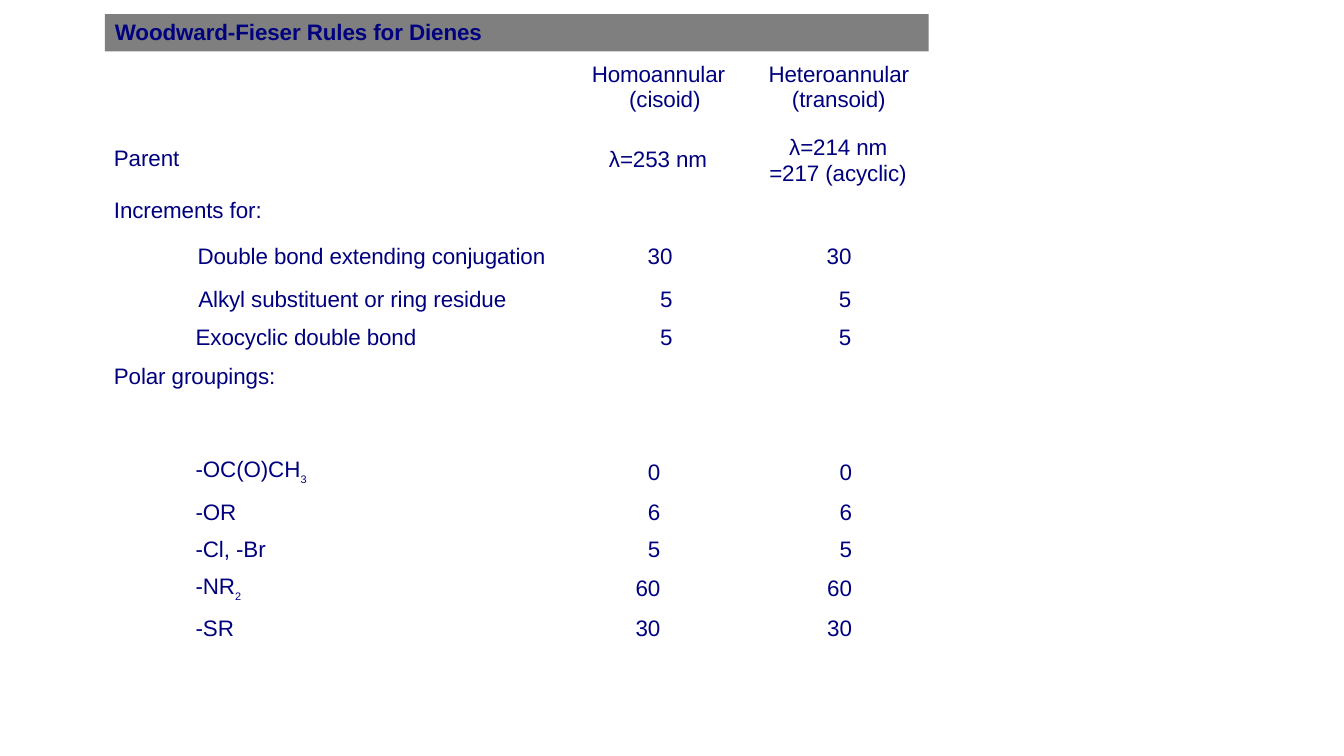
from dataclasses import dataclass
from typing import Any

import lxml.etree
import pptx
import pptx.dml.color
import pptx.enum.shapes
import pptx.enum.text
import pptx.oxml.ns
import pptx.util

SCALE = 9144
NAVY = "00007F"
GRAY = "7F7F7F"
ALIGN = pptx.enum.text.PP_ALIGN
LEFT, MID, RIGHT = ALIGN.LEFT, ALIGN.CENTER, ALIGN.RIGHT
TOP = pptx.enum.text.MSO_ANCHOR.TOP


@dataclass
class Para:
    text: str
    left: int = 0
    first: int = 0
    right: int = 0
    align: Any = LEFT
    before: float = 0
    line: float | None = None
    bold: bool = False


@dataclass
class Box:
    place: tuple[int, int, int, int]
    top: int
    paras: list[Para]
    fill: str | None = None


@dataclass
class Row:
    high: int
    tops: tuple[int, int, int]
    cells: tuple[Para, Para, Para]


@dataclass
class Grid:
    place: tuple[int, int]
    wides: tuple[int, int, int]
    rows: list[Row]


def px(count: int) -> pptx.util.Emu:
    return pptx.util.Emu(count * SCALE)


def color(code: str) -> pptx.dml.color.RGBColor:
    return pptx.dml.color.RGBColor.from_string(code)


def apply(target: Any, values: dict[str, Any]) -> None:
    for name, value in values.items():
        setattr(target, name, value)


def insets(top: int) -> dict[str, Any]:
    return {"margin_left": 0, "margin_right": 0, "margin_bottom": 0,
            "margin_top": px(top), "vertical_anchor": TOP}


def write(frame: Any, paras: list[Para]) -> None:
    for place, para in enumerate(paras):
        line = frame.add_paragraph() if place else frame.paragraphs[0]
        apply(line, {"alignment": para.align, "space_before": pptx.util.Pt(para.before)})
        if para.line:
            line.line_spacing = pptx.util.Pt(para.line)
        props = line._p.get_or_add_pPr()
        for name, value in {"marL": para.left, "marR": para.right, "indent": para.first}.items():
            props.set(name, str(px(value)))
        for level, part in enumerate(para.text.split("_")):
            if not part:
                continue
            run = line.add_run()
            run.text = part
            size = 13.5 if level else 16
            apply(run.font, {"name": "Arial", "size": pptx.util.Pt(size), "bold": para.bold})
            run.font.color.rgb = color(NAVY)
            marks = run._r.get_or_add_rPr()
            marks.set("spc", "-5")
            if level:
                marks.set("baseline", "-31000")


def draw_box(slide: Any, box: Box) -> None:
    spot = [px(side) for side in box.place]
    if box.fill:
        shape = slide.shapes.add_shape(pptx.enum.shapes.MSO_SHAPE.RECTANGLE, *spot)
        shape.shadow.inherit = False
        shape.fill.solid()
        shape.fill.fore_color.rgb = color(box.fill)
        shape.line.fill.background()
    else:
        shape = slide.shapes.add_textbox(*spot)
    apply(shape.text_frame, insets(box.top) | {"word_wrap": True})
    write(shape.text_frame, box.paras)


def clear(cell: Any) -> None:
    cell.fill.background()
    props = cell._tc.get_or_add_tcPr()
    for place, side in enumerate(("lnL", "lnR", "lnT", "lnB")):
        edge = lxml.etree.Element(pptx.oxml.ns.qn(f"a:{side}"), w="0")
        lxml.etree.SubElement(edge, pptx.oxml.ns.qn("a:noFill"))
        props.insert(place, edge)


def draw_grid(slide: Any, grid: Grid) -> None:
    size = sum(grid.wides), sum(row.high for row in grid.rows)
    frame = slide.shapes.add_table(
        len(grid.rows), len(grid.wides), *[px(side) for side in grid.place + size])
    table = frame.table
    apply(table, {"first_row": False, "horz_banding": False})
    for column, wide in zip(table.columns, grid.wides):
        column.width = px(wide)
    for line, row in zip(table.rows, grid.rows):
        line.height = px(row.high)
        for cell, top, para in zip(line.cells, row.tops, row.cells):
            clear(cell)
            apply(cell, insets(top))
            write(cell.text_frame, [para])
    if not any(para.text for para in grid.rows[0].cells[:2]):
        table.cell(0, 0).merge(table.cell(0, 1))


def bond(high: int, top: int, before: float, label: Para, value: str,
         left: int, line: float | None = None) -> Row:
    apply(label, {"before": before, "line": line})
    return Row(high, (top, top, top), (
        label,
        Para(value, right=48, align=RIGHT, before=before, line=line),
        Para(value, left, before=before, line=line)))


def polar(high: int, tops: tuple[int, int], befores: tuple[float, float],
          label: str, value: str, lines: tuple[float | None, float | None] = (None, None)) -> Row:
    near, far = [Para(value, right=right, align=RIGHT, before=befores[1], line=lines[1])
                 for right in (82, 3)]
    return Row(high, (tops[0], tops[1], tops[1]),
               (Para(label, 3, before=befores[0], line=lines[0]), near, far))


BOXES = [
    Box((104, 14, 817, 37), 4,
        [Para("Woodward-Fieser Rules for Dienes", 10, before=2.7, bold=True)], GRAY),
    Box((586, 58, 136, 54), 4,
        [Para("Homoannular (cisoid)", 38, -37, before=2.8, line=17.8)]),
    Box((112, 142, 68, 29), 1, [Para("Parent", 1, before=1)]),
    Box((603, 143, 102, 29), 1, [Para("λ=253 nm", 1, before=1)]),
    Box((760, 58, 143, 102), 4, [
        Para("Heteroannular (transoid)", 1, align=MID, before=2.8, line=17.8),
        Para("λ=214 nm", align=MID, before=14.8)]),
    Box((112, 358, 164, 29), 1, [Para("Polar groupings:", 1, before=1)]),
]

GRIDS = [
    Grid((110, 160), (482, 123, 189), [
        Row(32, (0, 0, 0), (Para(""), Para(""), Para("=217 (acyclic)", 48, line=17.7))),
        Row(42, (5, 0, 0), (Para("Increments for:", 3, before=3.9), Para(""), Para(""))),
        bond(44, 8, 5.5, Para("Double bond extending conjugation", 35, align=MID), "30", 105),
        bond(40, 7, 5.4, Para("Alkyl substituent or ring residue", right=3, align=MID), "5", 117),
        bond(31, 4, 2.8, Para("Exocyclic double bond", 84), "5", 117, 18.4),
    ]),
    Grid((191, 457), (277, 269, 111), [
        polar(35, (0, 0), (0, 0.1), "-OC(O)CH_3", "0", (17.7, None)),
        polar(37, (4, 4), (2.8, 2.8), "-OR", "6"),
        polar(37, (4, 4), (2.8, 2.8), "-Cl, -Br", "5"),
        polar(41, (4, 6), (2.8, 4.5), "-NR_2", "60"),
        polar(31, (4, 4), (2.8, 2.8), "-SR", "30", (18.4, 18.4)),
    ]),
]


def main() -> None:
    deck = pptx.Presentation()
    apply(deck, {"slide_width": px(1333), "slide_height": px(750)})
    slide = deck.slides.add_slide(deck.slide_layouts[6])
    for box in BOXES:
        draw_box(slide, box)
    for grid in GRIDS:
        draw_grid(slide, grid)
    deck.save("out.pptx")


if __name__ == "__main__":
    main()
